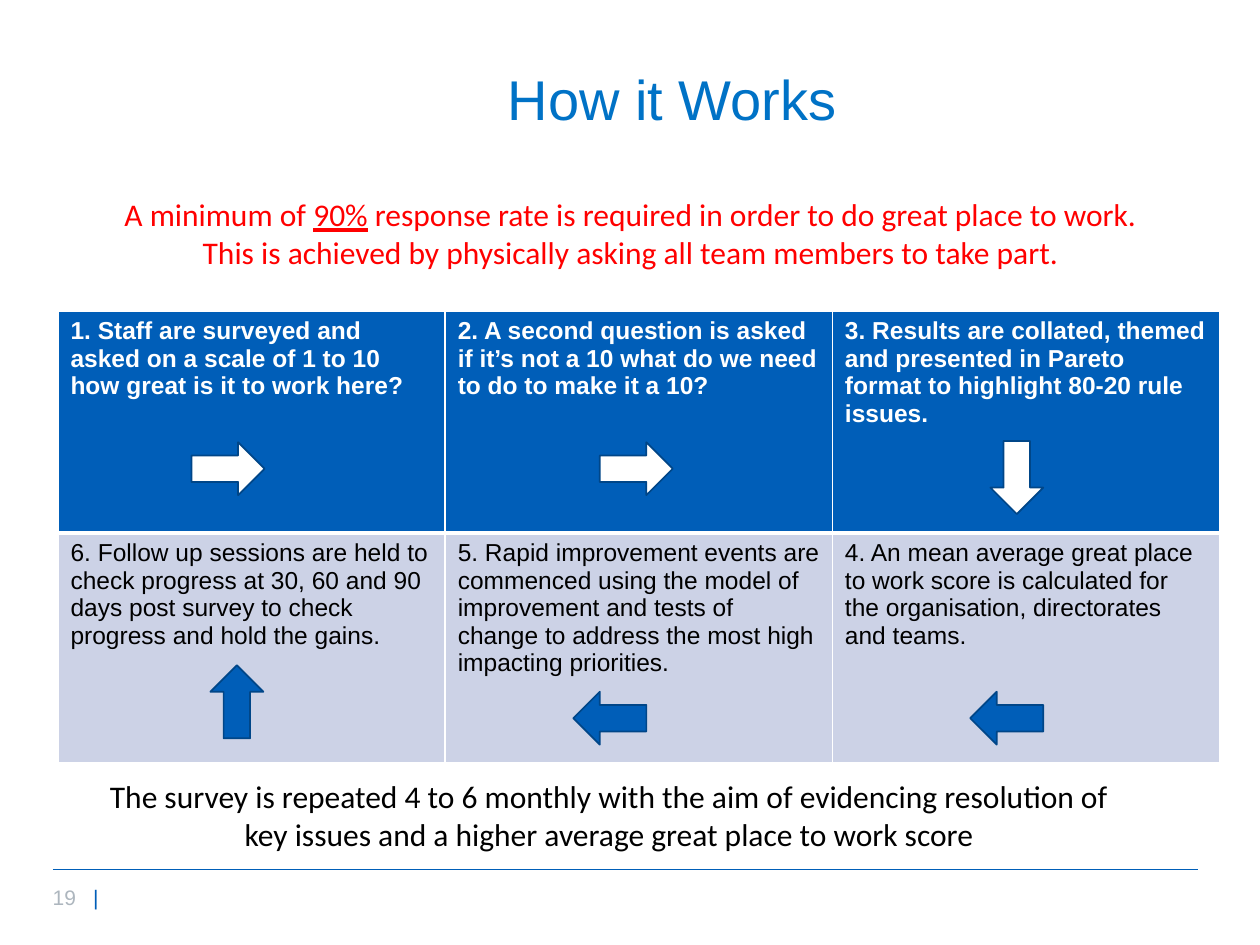
from lxml import etree
from pptx import Presentation
from pptx.dml.color import RGBColor
from pptx.enum.shapes import MSO_CONNECTOR, MSO_SHAPE
from pptx.enum.text import MSO_ANCHOR, PP_ALIGN
from pptx.oxml.ns import qn
from pptx.util import Inches, Pt

STRAIGHT = MSO_CONNECTOR.STRAIGHT
RIGHT_ARROW = MSO_SHAPE.RIGHT_ARROW
MIDDLE, TOP = MSO_ANCHOR.MIDDLE, MSO_ANCHOR.TOP
CENTER, LEFT = PP_ALIGN.CENTER, PP_ALIGN.LEFT

BLUE, WHITE, BLACK, RED = "005EB8", "FFFFFF", "000000", "FF0000"
TITLE_BLUE, PALE_BLUE, DARK_BLUE, GREY = "0072C6", "CCD2E6", "004688", "ADB6BE"

STEPS = [
    ["1. Staff are surveyed and asked on a scale of 1 to 10 how great is it to work here?",
     "2. A second question is asked if it’s not a 10 what do we need to do to make it a 10?",
     "3. Results are collated, themed and presented in Pareto format to highlight "
     "80-20 rule issues."],
    ["6. Follow up sessions are held to check progress at 30, 60 and 90 days post survey "
     "to check progress and hold the gains.",
     "5. Rapid improvement events are commenced using the model of improvement and tests "
     "of change to address the most high impacting priorities.",
     "4. An mean average great place to work score is calculated for the organisation, "
     "directorates and teams."],
]
ROW_STYLES = [
    {"fill": BLUE, "color": WHITE, "bold": True, "bottom": 3},
    {"fill": PALE_BLUE, "color": BLACK, "bold": False, "bottom": 1},
]
# Left, top, rotation and fill of each arrow, in step order
ARROWS = [
    (1.52, 3.51, 0, WHITE), (4.76, 3.51, 0, WHITE), (7.78, 3.58, 90, WHITE),
    (7.7, 5.49, 180, BLUE), (4.55, 5.49, 180, BLUE), (1.59, 5.36, 270, BLUE),
]


def rgb(value):
    return RGBColor.from_string(value)


def box_inches(box):
    return [Inches(length) for length in box]


def add_run(paragraph, text, color, **formats):
    run = paragraph.add_run()
    run.text = text
    run.font.color.rgb = rgb(color)
    for name, value in formats.items():
        setattr(run.font, name, value)


def add_title(slide, box, text):
    title = slide.shapes.title
    title.left, title.top, title.width, title.height = box_inches(box)
    frame = title.text_frame
    frame.word_wrap = True
    frame.vertical_anchor = MIDDLE
    paragraph = frame.paragraphs[0]
    paragraph.alignment = CENTER
    paragraph.line_spacing = 0.9
    add_run(paragraph, text, TITLE_BLUE, name="Arial", size=Pt(32))


def add_statement(slide, box, parts, color):
    """Centred text; each part is a text and whether it is underlined."""
    frame = slide.shapes.add_textbox(*box_inches(box)).text_frame
    frame.word_wrap = True
    paragraph = frame.paragraphs[0]
    paragraph.alignment = CENTER
    for text, underline in parts:
        add_run(paragraph, text, color, name="Calibri", size=Pt(18), underline=underline)


def set_borders(cell, widths):
    properties = cell._tc.get_or_add_tcPr()
    for index, (side, width) in enumerate(widths.items()):
        line = etree.Element(qn(f"a:{side}"), w=str(Pt(width)))
        fill = etree.SubElement(line, qn("a:solidFill"))
        etree.SubElement(fill, qn("a:srgbClr"), val=WHITE)
        properties.insert(index, line)


def add_steps_table(slide, box, row_heights):
    row_count, column_count = len(STEPS), len(STEPS[0])
    table = slide.shapes.add_table(row_count, column_count, *box_inches(box)).table
    for row, height in zip(table.rows, row_heights):
        row.height = Inches(height)
    top_width = 1
    for row_index, (texts, style) in enumerate(zip(STEPS, ROW_STYLES)):
        for column_index, text in enumerate(texts):
            cell = table.cell(row_index, column_index)
            cell.vertical_anchor = TOP
            cell.fill.solid()
            cell.fill.fore_color.rgb = rgb(style["fill"])
            set_borders(cell, {"lnL": 1, "lnR": 1, "lnT": top_width, "lnB": style["bottom"]})
            paragraph = cell.text_frame.paragraphs[0]
            paragraph.alignment = LEFT
            add_run(paragraph, text, style["color"], name="Arial", size=Pt(14),
                    bold=style["bold"])
        top_width = style["bottom"]


def add_arrow(slide, box, rotation, fill):
    arrow = slide.shapes.add_shape(RIGHT_ARROW, *box_inches(box))
    arrow.rotation = rotation
    arrow.shadow.inherit = False
    arrow.fill.solid()
    arrow.fill.fore_color.rgb = rgb(fill)
    arrow.line.color.rgb = rgb(DARK_BLUE)
    arrow.line.width = Pt(1)


def add_footer(slide, box, line_left, line_right, line_top):
    # Rule
    rule = slide.shapes.add_connector(
        STRAIGHT, *box_inches((line_left, line_top, line_right, line_top)))
    rule.line.color.rgb = rgb(BLUE)
    rule.line.width = Pt(0.75)
    etree.SubElement(rule._element.spPr, qn("a:effectLst"))

    # Page number and bar, set apart by a tab
    frame = slide.shapes.add_textbox(*box_inches(box)).text_frame
    frame.word_wrap = True
    paragraph = frame.paragraphs[0]
    tabs = etree.SubElement(paragraph._p.get_or_add_pPr(), qn("a:tabLst"))
    etree.SubElement(tabs, qn("a:tab"), pos=str(Inches(0.32)), algn="l")
    for text, color in (("19\t", GREY), ("|", BLUE)):
        add_run(paragraph, text, color, name="Arial", size=Pt(12))


def main():
    presentation = Presentation()
    presentation.slide_width, presentation.slide_height = Inches(10), Inches(7.5)
    slide = presentation.slides.add_slide(presentation.slide_layouts[5])

    add_footer(slide, (0.32, 6.97, 0.71, 0.3), 0.42, 9.51, 6.9)
    add_title(slide, (0.93, 0.48, 8.81, 0.67), "How it Works")
    add_statement(slide, (0.7, 6.12, 8.27, 0.71), [
        ("The survey is repeated 4 to 6 monthly with the aim of evidencing resolution of "
         "key issues and a higher average great place to work score", False),
    ], BLACK)
    add_steps_table(slide, (0.46, 2.47, 9.22, 3.58), (1.76, 1.82))
    add_statement(slide, (0.87, 1.5, 8.27, 0.71), [
        ("A minimum of ", False),
        ("90%", True),
        (" response rate is required in order to do great place to work. "
         "This is achieved by physically asking all team members to take part.", False),
    ], RED)
    for left, top, rotation, fill in ARROWS:
        add_arrow(slide, (left, top, 0.58, 0.42), rotation, fill)

    presentation.save("out.pptx")


if __name__ == "__main__":
    main()
